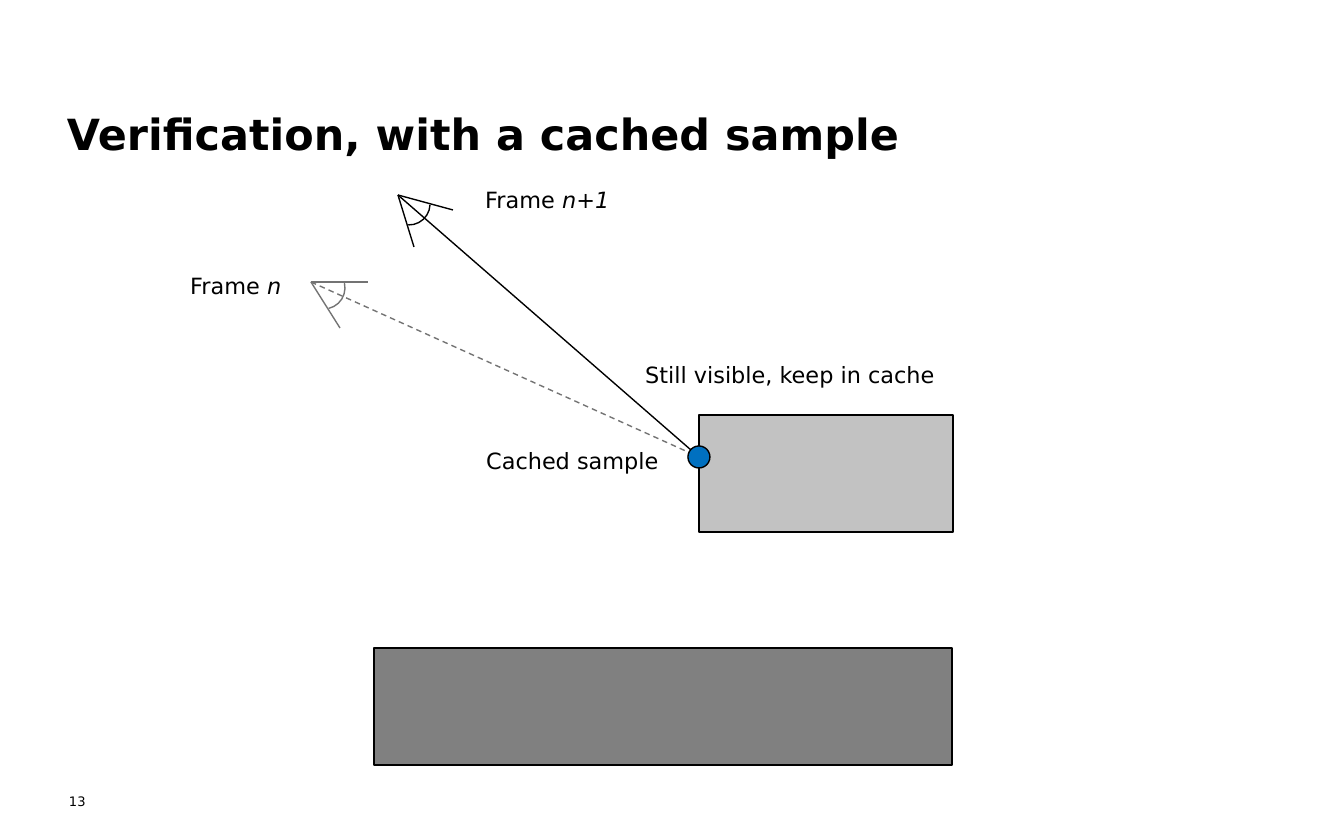
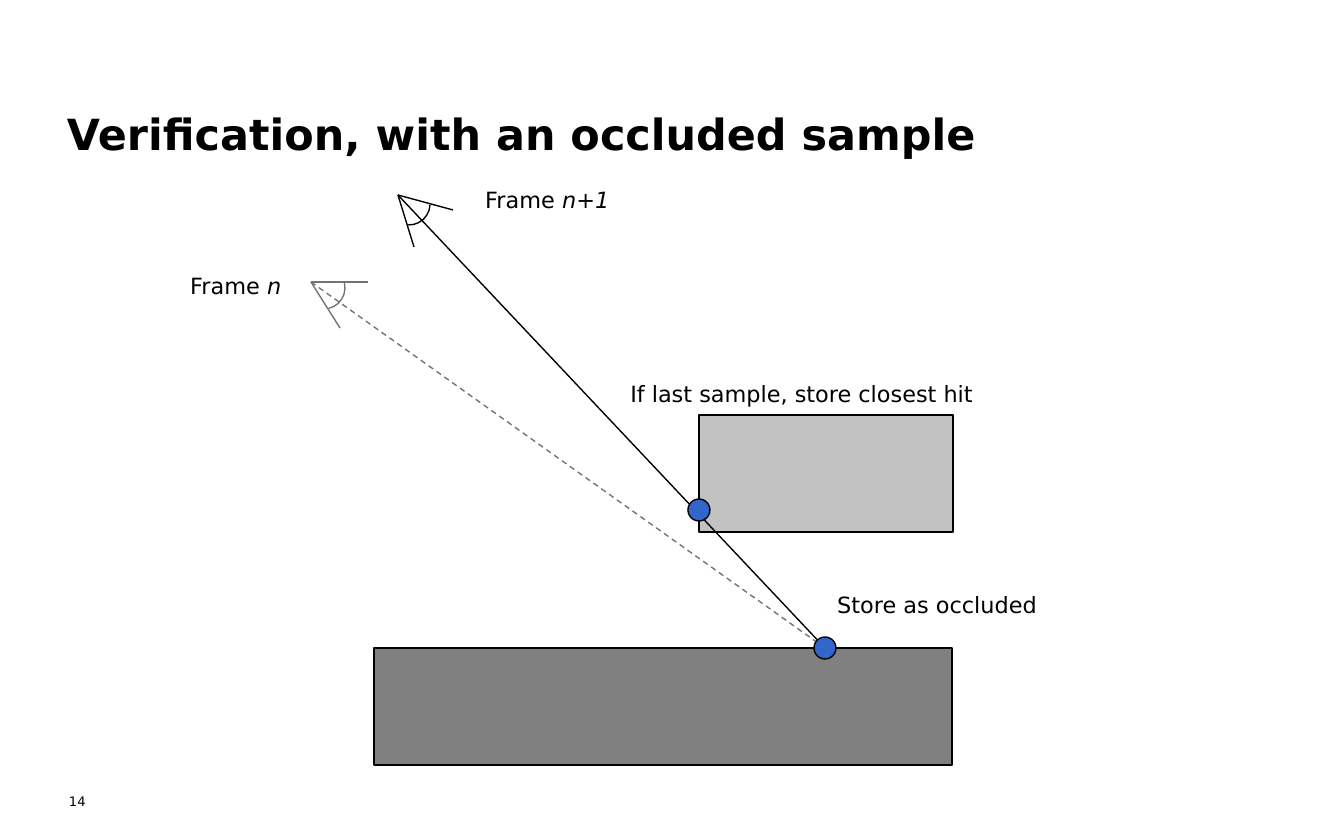
from math import cos, radians, sin
from typing import NamedTuple

from lxml.etree import SubElement
from pptx import Presentation
from pptx.dml.color import RGBColor
from pptx.enum.dml import MSO_LINE
from pptx.enum.shapes import MSO_CONNECTOR, MSO_SHAPE
from pptx.enum.text import MSO_ANCHOR, MSO_AUTO_SIZE
from pptx.oxml.ns import qn
from pptx.util import Emu, Inches, Pt

BLACK = RGBColor(0x00, 0x00, 0x00)
PAST_GREY = RGBColor(0x73, 0x73, 0x73)
FLOOR_GREY = RGBColor(0x80, 0x80, 0x80)
BLOCK_GREY = RGBColor(0xC2, 0xC2, 0xC2)
CACHED_BLUE = RGBColor(0x00, 0x70, 0xC0)
OCCLUDED_BLUE = RGBColor(0x33, 0x66, 0xCC)

FONT = "DejaVu Sans"
LINE_WIDTH = Pt(0.75)
PX_PER_INCH = 134.4
DOT_SIZE = 22
ARC_SIZE = 42
LABEL_HEIGHT = 40


class Box(NamedTuple):
    left: int
    top: int
    width: int
    height: int

    def inner(self, left, top, width, height):
        return Box(self.left + left, self.top + top, width, height)

    def point(self, x, y):
        return self.left + x, self.top + y


SLIDE = Box(0, 0, 1344, 840)
TITLE = Box(67, 19, 1165, 140)
PAGE_NUMBER = Box(69, 793, 66, 38)
SCENE = Box(177, 180, 877, 585)

# Places inside the scene
EYE_BEFORE = (134, 102)
EYE_NOW = (221, 15)
FLOOR = (197, 468, 578, 117)
BLOCK = (522, 235, 254, 117)
FRAME_LABELS = [
    ((0, 86, 121), "Frame ", "n"),
    ((295, 0, 153), "Frame ", "n+1"),
]


def px(length):
    return Emu(round(length * Inches(1) / PX_PER_INCH))


def emu_box(box):
    return [px(length) for length in box]


def add_text(slide, box, runs, frame_format, font_format):
    """Write one paragraph; runs are (text, italic) pairs."""
    frame = slide.shapes.add_textbox(*emu_box(box)).text_frame
    for name, value in frame_format.items():
        setattr(frame, name, value)
    for text, italic in runs:
        run = frame.paragraphs[0].add_run()
        run.text = text
        run.font.color.rgb = BLACK
        for name, value in {"name": FONT, "italic": italic, **font_format}.items():
            setattr(run.font, name, value)


def add_label(slide, box, text, italic_text=""):
    runs = [(text, False)]
    if italic_text:
        runs.append((italic_text, True))
    frame_format = {"word_wrap": False, "auto_size": MSO_AUTO_SIZE.SHAPE_TO_FIT_TEXT}
    add_text(slide, box, runs, frame_format, {"size": Pt(12)})


def add_figure(shapes, kind, box, fill=None, line=BLACK):
    shape = shapes.add_shape(kind, *emu_box(box))
    shape.shadow.inherit = False
    if fill is None:
        shape.fill.background()
    else:
        shape.fill.solid()
        shape.fill.fore_color.rgb = fill
    shape.line.color.rgb = line
    shape.line.width = LINE_WIDTH
    return shape


def add_line(shapes, start, end, color, dash=None):
    line = shapes.add_connector(
        MSO_CONNECTOR.STRAIGHT, *emu_box(start), *emu_box(end)
    )
    line.line.color.rgb = color
    line.line.width = LINE_WIDTH
    if dash:
        line.line.dash_style = dash
    SubElement(line.element.spPr, qn("a:effectLst"))


def add_eye(slide, apex, turn, color):
    """Draw a viewing angle at apex, turned clockwise by turn degrees."""

    def polar(distance, degrees):
        angle = radians(degrees + turn)
        return (round(apex[0] + distance * cos(angle)),
                round(apex[1] + distance * sin(angle)))

    shapes = slide.shapes.add_group_shape().shapes
    for length, degrees in ((57, 0), (54, 57.5)):
        add_line(shapes, apex, polar(length, degrees), color)
    center_x, center_y = polar(14, 24)
    arc_box = Box(center_x - ARC_SIZE // 2, center_y - ARC_SIZE // 2,
                  ARC_SIZE, ARC_SIZE)
    arc = add_figure(shapes, MSO_SHAPE.ARC, arc_box, line=color)
    arc.rotation = 77 + turn


def add_frame(slide, title, number):
    no_inset = dict.fromkeys(
        ("margin_left", "margin_top", "margin_right", "margin_bottom"), 0
    )
    common = {"word_wrap": True, **no_inset}
    add_text(slide, TITLE, [(title, False)],
             {"vertical_anchor": MSO_ANCHOR.BOTTOM, **common},
             {"size": Pt(23), "bold": True})
    add_text(slide, PAGE_NUMBER, [(str(number), False)], common, {"size": Pt(7)})


def add_scene(slide, box, target, dots, dot_color, labels):
    """Draw both eyes looking at target, with dots at the hit points."""
    shapes = slide.shapes
    for place, fill in ((FLOOR, FLOOR_GREY), (BLOCK, BLOCK_GREY)):
        add_figure(shapes, MSO_SHAPE.RECTANGLE, box.inner(*place), fill)
    for eye, turn, color, dash in (
        (EYE_NOW, 15, BLACK, None),
        (EYE_BEFORE, 0, PAST_GREY, MSO_LINE.DASH),
    ):
        apex = box.point(*eye)
        add_eye(slide, apex, turn, color)
        add_line(shapes, apex, box.point(*target), color, dash)
    for x, y in dots:
        dot_box = box.inner(x - DOT_SIZE // 2, y - DOT_SIZE // 2, DOT_SIZE, DOT_SIZE)
        add_figure(shapes, MSO_SHAPE.OVAL, dot_box, dot_color)
    for place, *texts in labels + FRAME_LABELS:
        add_label(slide, box.inner(*place, LABEL_HEIGHT), *texts)


def main():
    presentation = Presentation()
    presentation.slide_width = px(SLIDE.width)
    presentation.slide_height = px(SLIDE.height)

    cached_hit, occluded_hit, closest_hit = (522, 277), (648, 468), (522, 330)
    pages = [
        ("Verification, with a cached sample",
         cached_hit, [cached_hit], CACHED_BLUE,
         [((296, 261, 199), "Cached sample"),
          ((455, 175, 321), "Still visible, keep in cache")]),
        ("Verification, with an occluded sample",
         occluded_hit, [closest_hit, occluded_hit], OCCLUDED_BLUE,
         [((647, 405, 230), "Store as occluded"),
          ((440, 194, 379), "If last sample, store closest hit")]),
    ]
    for number, (title, *scene) in enumerate(pages, start=13):
        slide = presentation.slides.add_slide(presentation.slide_layouts[6])
        add_frame(slide, title, number)
        add_scene(slide, SCENE, *scene)

    presentation.save("out.pptx")


if __name__ == "__main__":
    main()
